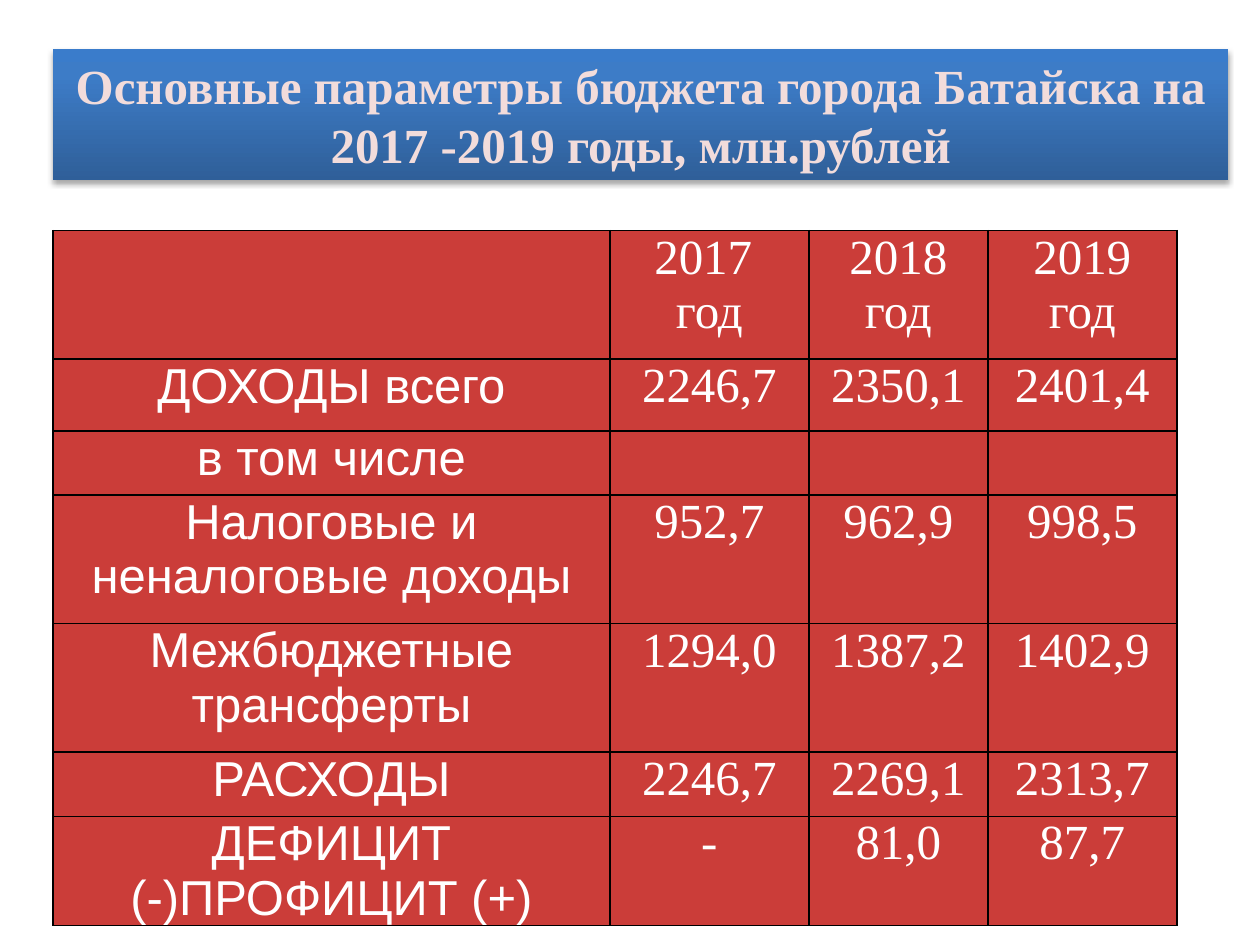
from lxml.etree import SubElement
from pptx import Presentation
from pptx.dml.color import RGBColor
from pptx.enum.shapes import MSO_SHAPE
from pptx.enum.text import MSO_ANCHOR, PP_ALIGN
from pptx.oxml.ns import qn
from pptx.util import Inches, Pt

SERIF, SANS = "Times New Roman", "Arial"
RED, WHITE, BLACK, PINK = "CB3D39", "FFFFFF", "000000", "F2DCDB"
BANNER_STOPS = [(0, "2F5F99"), (80, "3D7CC7"), (100, "3A7CCB")]
COL_WIDTHS = [4.42, 1.58, 1.42, 1.5]
ROW_HEIGHTS = [1.02, 0.57, 0.51, 1.02, 1.02, 0.51, 0.51]
BUDGET = [
    ["", "2017 \nгод", "2018 год", "2019 год"],
    ["ДОХОДЫ всего", "2246,7", "2350,1", "2401,4"],
    ["в том числе", "", "", ""],
    ["Налоговые и неналоговые доходы", "952,7", "962,9", "998,5"],
    ["Межбюджетные трансферты", "1294,0", "1387,2", "1402,9"],
    ["РАСХОДЫ", "2246,7", "2269,1", "2313,7"],
    ["ДЕФИЦИТ (-)ПРОФИЦИТ (+)", "-", "81,0", "87,7"],
]


def rgb(color):
    return RGBColor.from_string(color)


def add_color(parent, color, alpha=100):
    clr = SubElement(parent, qn("a:srgbClr"), val=color)
    if alpha < 100:
        SubElement(clr, qn("a:alpha"), val=str(alpha * 1000))


def write(tf, text, color, **font):
    """Fill a text frame with centred paragraphs, one for each line."""
    tf.text = text
    for p in tf.paragraphs:
        p.alignment = PP_ALIGN.CENTER
        for target in [p, *p.runs]:
            target.font.color.rgb = rgb(color)
            for name, value in font.items():
                setattr(target.font, name, value)


def set_gradient(sp, stops, angle):
    sp.fill.gradient()
    sp.fill.gradient_angle = angle
    stop_list = sp._element.spPr.find(".//" + qn("a:gsLst"))
    stop_list.clear()
    for pos, color in stops:
        add_color(SubElement(stop_list, qn("a:gs"), pos=str(pos * 1000)), color)


def set_shadow(sp):
    sp.shadow.inherit = False
    effects = sp._element.spPr.find(qn("a:effectLst"))
    shadow = SubElement(effects, qn("a:outerShdw"), blurRad=str(Pt(3.1)),
                        dist=str(Pt(1.8)), dir="5400000", rotWithShape="0")
    add_color(shadow, BLACK, 35)


def set_borders(cell):
    props = cell._tc.get_or_add_tcPr()
    for i, side in enumerate(["lnL", "lnR", "lnT", "lnB"]):
        ln = props.makeelement(qn("a:" + side), {"w": str(Pt(1))})
        add_color(SubElement(ln, qn("a:solidFill")), BLACK)
        props.insert(i, ln)


def add_banner(s, x, y, w, h):
    sp = s.shapes.add_shape(MSO_SHAPE.RECTANGLE, Inches(x), Inches(y), Inches(w), Inches(h))
    set_gradient(sp, BANNER_STOPS, 90)
    sp.line.fill.background()
    set_shadow(sp)
    tf = sp.text_frame
    tf.word_wrap = True
    tf.vertical_anchor = MSO_ANCHOR.MIDDLE
    write(tf, "Основные параметры бюджета города Батайска на 2017 -2019 годы, млн.рублей",
          PINK, name=SERIF, size=Pt(28), bold=True)


def add_budget_table(s, x, y):
    frame = s.shapes.add_table(len(ROW_HEIGHTS), len(COL_WIDTHS), Inches(x), Inches(y),
                               Inches(sum(COL_WIDTHS)), Inches(sum(ROW_HEIGHTS)))
    table = frame.table
    for col, width in zip(table.columns, COL_WIDTHS):
        col.width = Inches(width)
    for row, height, texts in zip(table.rows, ROW_HEIGHTS, BUDGET):
        row.height = Inches(height)
        for i, (cell, text) in enumerate(zip(row.cells, texts)):
            margins = {"margin_left": 0.05, "margin_right": 0.05,
                       "margin_top": 0, "margin_bottom": 0}
            for name, value in margins.items():
                setattr(cell, name, Inches(value))
            cell.fill.solid()
            cell.fill.fore_color.rgb = rgb(RED)
            set_borders(cell)
            write(cell.text_frame, text, WHITE, name=SERIF if i else SANS,
                  size=Pt(28), bold=False)


def main():
    prs = Presentation()
    prs.slide_width, prs.slide_height = Inches(10), Inches(7.5)
    s = prs.slides.add_slide(prs.slide_layouts[6])
    add_banner(s, 0.42, 0.39, 9.33, 1.04)
    add_budget_table(s, 0.42, 1.83)
    prs.save("out.pptx")


if __name__ == "__main__":
    main()
